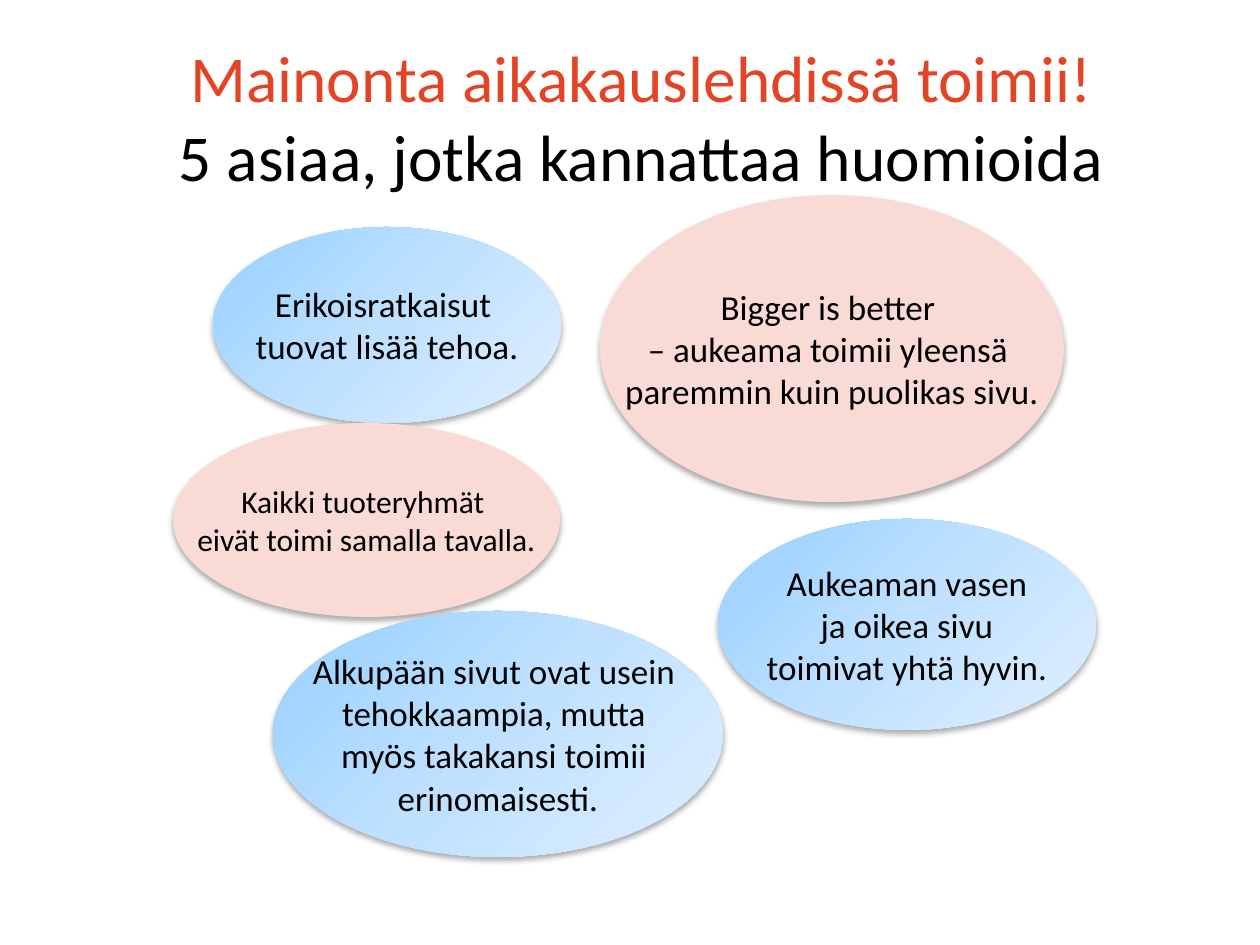
"""Build a slide with a title and five ellipses on magazine advertising."""
from dataclasses import dataclass

from pptx import Presentation
from pptx.dml.color import RGBColor
from pptx.enum.shapes import MSO_SHAPE
from pptx.enum.text import MSO_ANCHOR, MSO_AUTO_SIZE, PP_ALIGN
from pptx.oxml import parse_xml
from pptx.oxml.ns import nsdecls, qn
from pptx.util import Pt

ELLIPSE = MSO_SHAPE.OVAL
MIDDLE = MSO_ANCHOR.MIDDLE
CENTER = PP_ALIGN.CENTER
NO_AUTOFIT = MSO_AUTO_SIZE.NONE
EMU_PER_PX = 914400 / 126
TITLE_ONLY = 5


@dataclass(frozen=True)
class Theme:
    font: str = "Calibri"
    accent: str = "E24426"
    text: str = "000000"
    pink: str = "F9DAD4"
    blues: tuple = ((0, "96D0FF"), (50, "BFE1FF"), (100, "E0EFFF"))
    title_size: float = 37.4
    body_size: int = 20
    small_size: int = 18


THEME = Theme()


def px(length):
    return round(length * EMU_PER_PX)


def add_lines(paragraph, lines, size, colors):
    paragraph.alignment = CENTER
    for index, (line, color) in enumerate(zip(lines, colors)):
        if index:
            paragraph.add_line_break()
        run = paragraph.add_run()
        run.text = line
        run.font.name = THEME.font
        run.font.size = Pt(size)
        run.font.color.rgb = RGBColor.from_string(color)


GRADIENT_STOPS = "".join(
    f'<a:gs pos="{position * 1000}"><a:srgbClr val="{color}"/></a:gs>'
    for position, color in THEME.blues
)
GRADIENT = (
    f'<a:gradFill {nsdecls("a")} rotWithShape="1"><a:gsLst>{GRADIENT_STOPS}</a:gsLst>'
    '<a:lin ang="2700000" scaled="0"/></a:gradFill>'
)
SHADOW = (
    f'<a:outerShdw {nsdecls("a")} blurRad="{Pt(3.5)}" dist="{Pt(2.2)}" dir="5400000" '
    'algn="ctr" rotWithShape="0"><a:srgbClr val="000000"><a:alpha val="32000"/>'
    '</a:srgbClr></a:outerShdw>'
)

ELLIPSES = [
    ((213, 227, 348, 196), True, THEME.body_size,
     [["Erikoisratkaisut ", "tuovat lisää tehoa."]]),
    ((173, 423, 387, 194), False, THEME.small_size,
     [["Kaikki tuoteryhmät ", "eivät toimi samalla tavalla."]]),
    ((273, 611, 450, 246), True, THEME.body_size,
     [["Alkupään sivut ovat usein ", "tehokkaampia, mutta ",
       "myös takakansi toimii ", "erinomaisesti."]]),
    ((718, 519, 378, 211), True, THEME.body_size,
     [["Aukeaman vasen"], [" ja oikea sivu ", "toimivat yhtä hyvin."]]),
    ((600, 195, 464, 307), False, THEME.body_size,
     [["Bigger is better ", "– aukeama toimii yleensä ",
       "paremmin kuin puolikas sivu."]]),
]

presentation = Presentation()
presentation.slide_width = px(1260)
presentation.slide_height = px(945)
slide = presentation.slides.add_slide(presentation.slide_layouts[TITLE_ONLY])

title = slide.shapes.title
title.left, title.top, title.width, title.height = map(px, (123, 38, 1037, 156))
title.text_frame.auto_size = NO_AUTOFIT
title.text_frame.vertical_anchor = MIDDLE
add_lines(
    title.text_frame.paragraphs[0],
    ["Mainonta aikakauslehdissä toimii!", "5 asiaa, jotka kannattaa huomioida"],
    THEME.title_size,
    [THEME.accent, THEME.text],
)

for bounds, is_blue, size, paragraphs in ELLIPSES:
    shape = slide.shapes.add_shape(ELLIPSE, *map(px, bounds))
    shape.fill.solid()
    shape.fill.fore_color.rgb = RGBColor.from_string(THEME.pink)
    shape.line.fill.background()
    shape.shadow.inherit = False
    properties = shape.element.spPr
    properties.find(qn("a:effectLst")).append(parse_xml(SHADOW))
    if is_blue:
        properties.replace(properties.find(qn("a:solidFill")), parse_xml(GRADIENT))

    frame = shape.text_frame
    frame.word_wrap = False
    frame.vertical_anchor = MIDDLE
    frame.margin_left = frame.margin_right = px(15)
    frame.margin_top = frame.margin_bottom = px(9)
    for index, lines in enumerate(paragraphs):
        paragraph = frame.add_paragraph() if index else frame.paragraphs[0]
        add_lines(paragraph, lines, size, [THEME.text] * len(lines))

presentation.save("out.pptx")
